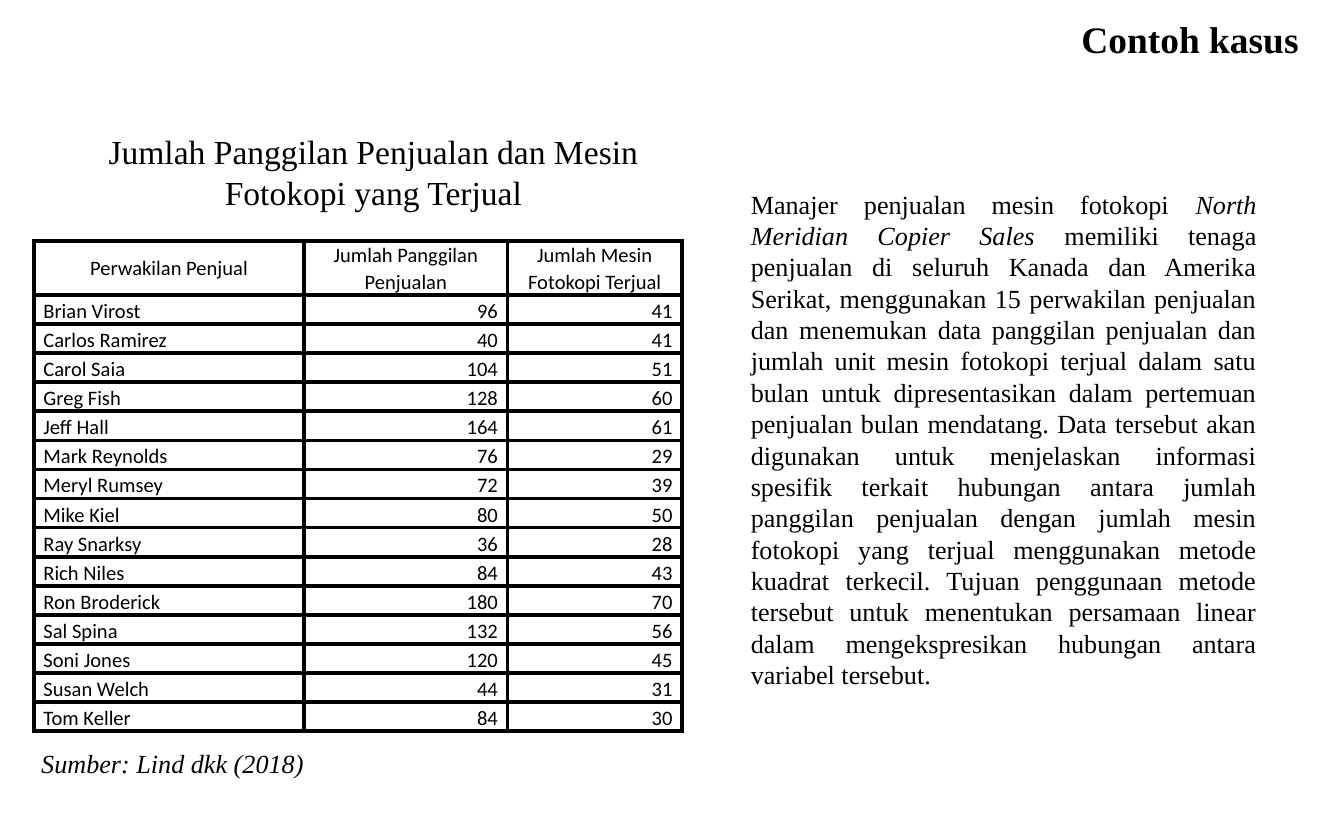
from dataclasses import dataclass

from lxml.etree import SubElement
from pptx import Presentation
from pptx.dml.color import RGBColor
from pptx.enum.text import MSO_ANCHOR as Anchor, MSO_AUTO_SIZE as AutoSize, PP_ALIGN as Align
from pptx.oxml.ns import qn
from pptx.util import Cm, Pt


@dataclass(frozen=True)
class Theme:
    ink: RGBColor = RGBColor(0, 0, 0)
    paper: RGBColor = RGBColor(255, 255, 255)
    serif: str = "Times New Roman"
    sans: str = "Calibri"
    title: int = 20
    heading: int = 18
    body: int = 14
    cell: int = 11
    border: float = 2.25


class SlideWriter:
    def __init__(self, slide, theme):
        self.slide = slide
        self.theme = theme
        slide.background.fill.solid()
        slide.background.fill.fore_color.rgb = theme.paper

    def style(self, paragraph, family, size, align):
        paragraph.alignment = align
        paragraph.font.name = family
        paragraph.font.size = Pt(size)
        paragraph.font.color.rgb = self.theme.ink

    def text(self, box, runs, size, align=Align.LEFT, bold=None, wrap=True, anchor=Anchor.TOP):
        """Add a text box; runs are (wording, italic) pairs and box is in cm."""
        frame = self.slide.shapes.add_textbox(*map(Cm, box)).text_frame
        frame.word_wrap = wrap
        frame.auto_size = AutoSize.SHAPE_TO_FIT_TEXT
        frame.vertical_anchor = anchor
        paragraph = frame.paragraphs[0]
        self.style(paragraph, self.theme.serif, size, align)
        paragraph.font.bold = bold
        for wording, italic in runs:
            run = paragraph.add_run()
            run.text = wording
            if italic:
                run.font.italic = True

    def cell(self, cell, value, align, anchor):
        cell.text = str(value)
        cell.fill.background()
        cell.vertical_anchor = anchor
        cell.margin_left = cell.margin_right = Cm(0.18)
        cell.margin_top = cell.margin_bottom = 0
        paragraph = cell.text_frame.paragraphs[0]
        self.style(paragraph, self.theme.sans, self.theme.cell, align)
        paragraph.line_spacing = 1.07
        paragraph.space_after = Pt(8)
        self.borders(cell)

    def borders(self, cell):
        properties = cell._tc.get_or_add_tcPr()
        for position, side in enumerate(("lnL", "lnR", "lnT", "lnB")):
            line = properties.makeelement(qn(f"a:{side}"), {"w": str(Pt(self.theme.border))})
            fill = SubElement(line, qn("a:solidFill"))
            SubElement(fill, qn("a:srgbClr"), val=str(self.theme.ink))
            properties.insert(position, line)

    def table(self, left, top, widths, header_height, row_height, header, rows):
        heights = [header_height] + [row_height] * len(rows)
        table = self.slide.shapes.add_table(
            len(heights), len(widths), Cm(left), Cm(top), Cm(sum(widths)), Cm(sum(heights))
        ).table
        table.horz_banding = False
        for column, width in zip(table.columns, widths):
            column.width = Cm(width)
        for row, height in zip(table.rows, heights):
            row.height = Cm(height)
        for c, label in enumerate(header):
            self.cell(table.cell(0, c), label, Align.CENTER, Anchor.BOTTOM if c else Anchor.MIDDLE)
        for r, values in enumerate(rows, start=1):
            for c, value in enumerate(values):
                self.cell(table.cell(r, c), value, Align.RIGHT if c else Align.LEFT, Anchor.BOTTOM)


HEADER = ("Perwakilan Penjual", "Jumlah Panggilan Penjualan", "Jumlah Mesin Fotokopi Terjual")
SALES = [
    ("Brian Virost", 96, 41),
    ("Carlos Ramirez", 40, 41),
    ("Carol Saia", 104, 51),
    ("Greg Fish", 128, 60),
    ("Jeff Hall", 164, 61),
    ("Mark Reynolds", 76, 29),
    ("Meryl Rumsey", 72, 39),
    ("Mike Kiel", 80, 50),
    ("Ray Snarksy", 36, 28),
    ("Rich Niles", 84, 43),
    ("Ron Broderick", 180, 70),
    ("Sal Spina", 132, 56),
    ("Soni Jones", 120, 45),
    ("Susan Welch", 44, 31),
    ("Tom Keller", 84, 30),
]
CASE = [
    ("Manajer penjualan mesin fotokopi ", False),
    ("North Meridian Copier Sales ", True),
    (
        "memiliki tenaga penjualan di seluruh Kanada dan Amerika Serikat, menggunakan 15 "
        "perwakilan penjualan dan menemukan data panggilan penjualan dan jumlah unit mesin "
        "fotokopi terjual dalam satu bulan untuk dipresentasikan dalam pertemuan penjualan "
        "bulan mendatang. Data tersebut akan digunakan untuk menjelaskan informasi spesifik "
        "terkait hubungan antara jumlah panggilan penjualan dengan jumlah mesin fotokopi yang "
        "terjual menggunakan metode kuadrat terkecil. Tujuan penggunaan metode tersebut untuk "
        "menentukan persamaan linear dalam mengekspresikan hubungan antara variabel tersebut.",
        False,
    ),
]


def main():
    deck = Presentation()
    deck.slide_width, deck.slide_height = Cm(25.4), Cm(15.88)
    theme = Theme()
    writer = SlideWriter(deck.slides.add_slide(deck.slide_layouts[6]), theme)

    writer.table(0.64, 4.55, (5.11, 3.84, 3.3), 1.0, 0.55, HEADER, SALES)
    writer.text((20.19, 0.18, 4.65, 1.11), [("Contoh kasus", False)], theme.title,
                Align.JUSTIFY, bold=True, wrap=False, anchor=Anchor.MIDDLE)
    writer.text((0.53, 14, 12.7, 0.85), [("Sumber: Lind dkk (2018)", True)], theme.body)
    writer.text((0.71, 2.36, 12.7, 1.8),
                [("Jumlah Panggilan Penjualan dan Mesin Fotokopi yang Terjual", False)],
                theme.heading, Align.CENTER)
    writer.text((13.94, 3.43, 10.06, 9.83), CASE, theme.body, Align.JUSTIFY)

    deck.save("out.pptx")


if __name__ == "__main__":
    main()
